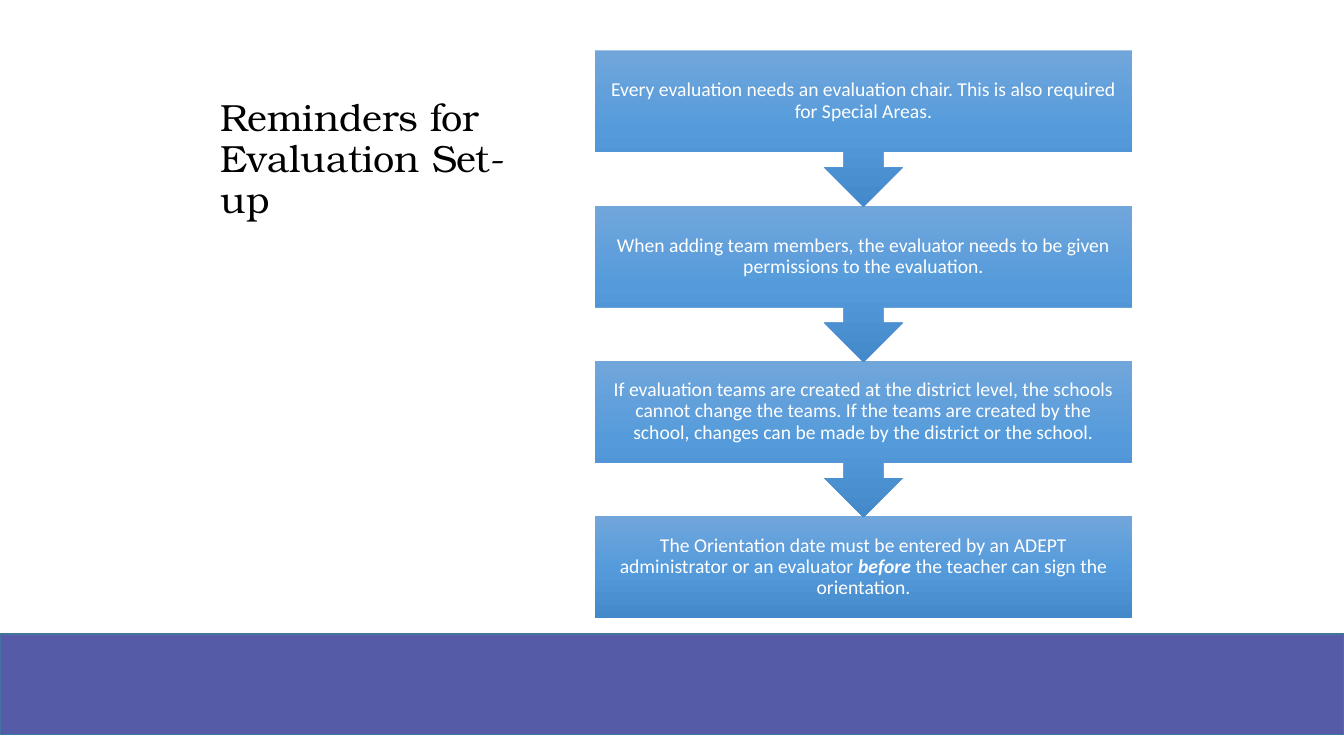
import copy
from dataclasses import dataclass

import pptx
import pptx.dml.color
import pptx.enum.shapes
import pptx.enum.text
import pptx.oxml.ns
import pptx.util

Inches = pptx.util.Inches
Shape = pptx.enum.shapes.MSO_SHAPE
Align = pptx.enum.text.PP_ALIGN
Anchor = pptx.enum.text.MSO_ANCHOR


@dataclass
class Theme:
    title_font: str = "TeX Gyre Bonum"
    body_font: str = "Calibri"
    title_size: int = 27
    body_size: int = 14
    title_color: str = "000000"
    body_color: str = "FFFFFF"
    band: str = "565BA7"
    band_line: str = "43739E"
    gradient: tuple = ((0, "71A6DB"), (0.5, "559BDB"), (1, "448ACA"))
    line_spacing: float = 0.9
    inset: float = 0.11


def rgb(value):
    return pptx.dml.color.RGBColor.from_string(value)


class SlideBuilder:
    def __init__(self, s, theme):
        self.s = s
        self.theme = theme

    def add_runs(self, p, parts, font, size, color):
        p.line_spacing = self.theme.line_spacing
        for text, emphasis in parts:
            r = p.add_run()
            r.text = text
            r.font.name = font
            r.font.size = pptx.util.Pt(size)
            r.font.color.rgb = rgb(color)
            if emphasis:
                r.font.bold = r.font.italic = True

    def title(self, text, left, top, width, height):
        t = self.theme
        sp = self.s.shapes.add_textbox(Inches(left), Inches(top), Inches(width), Inches(height))
        tf = sp.text_frame
        tf.word_wrap = True
        tf.vertical_anchor = Anchor.BOTTOM
        self.add_runs(tf.paragraphs[0], [(text, False)], t.title_font, t.title_size, t.title_color)

    def shape(self, kind, left, top, width, height):
        sp = self.s.shapes.add_shape(kind, Inches(left), Inches(top), Inches(width), Inches(height))
        sp.shadow.inherit = False
        return sp

    def band(self, left, top, width, height):
        sp = self.shape(Shape.RECTANGLE, left, top, width, height)
        sp.fill.solid()
        sp.fill.fore_color.rgb = rgb(self.theme.band)
        sp.line.color.rgb = rgb(self.theme.band_line)
        sp.line.width = pptx.util.Pt(1)

    def step(self, kind, parts, left, top, width, height):
        t = self.theme
        sp = self.shape(kind, left, top, width, height)
        self.fill_gradient(sp)
        sp.line.fill.background()
        tf = sp.text_frame
        tf.word_wrap = True
        tf.vertical_anchor = Anchor.MIDDLE
        tf.margin_left = tf.margin_right = tf.margin_top = tf.margin_bottom = Inches(t.inset)
        p = tf.paragraphs[0]
        p.alignment = Align.CENTER
        self.add_runs(p, parts, t.body_font, t.body_size, t.body_color)

    def fill_gradient(self, sp):
        sp.fill.gradient()
        sp.fill.gradient_angle = 270
        stop_list = next(sp._element.spPr.iter(pptx.oxml.ns.qn("a:gsLst")))
        stop_list.append(copy.deepcopy(stop_list[-1]))
        for stop, (position, color) in zip(sp.fill.gradient_stops, self.theme.gradient):
            stop.position = position
            stop.color.rgb = rgb(color)


STEPS = [
    [("Every evaluation needs an evaluation chair. This is also required for Special Areas.", False)],
    [("When adding team members, the evaluator needs to be given permissions to the evaluation.", False)],
    [("If evaluation teams are created at the district level, the schools cannot change the teams. "
      "If the teams are created by the school, changes can be made by the district or the school.", False)],
    [("The Orientation date must be entered by an ADEPT administrator or an evaluator ", False),
     ("before", True),
     (" the teacher can sign the orientation.", False)],
]


def main():
    prs = pptx.Presentation()
    prs.slide_width = Inches(13.33)
    prs.slide_height = Inches(7.5)
    slide = SlideBuilder(prs.slides.add_slide(prs.slide_layouts[6]), Theme())

    slide.band(0, 6.29, 13.33, 1)
    slide.title("Reminders for Evaluation Set-up", 2.09, 0.5, 3.38, 1.75)

    left, top, width, pitch = 5.9, 0.5, 5.33, 1.54
    box_height, callout_height = 1.01, 1.55
    last = len(STEPS) - 1
    for i in range(last, -1, -1):
        kind, height = Shape.DOWN_ARROW_CALLOUT, callout_height
        if i == last:
            kind, height = Shape.RECTANGLE, box_height
        slide.step(kind, STEPS[i], left, top + i * pitch, width, height)

    prs.save("out.pptx")


if __name__ == "__main__":
    main()
